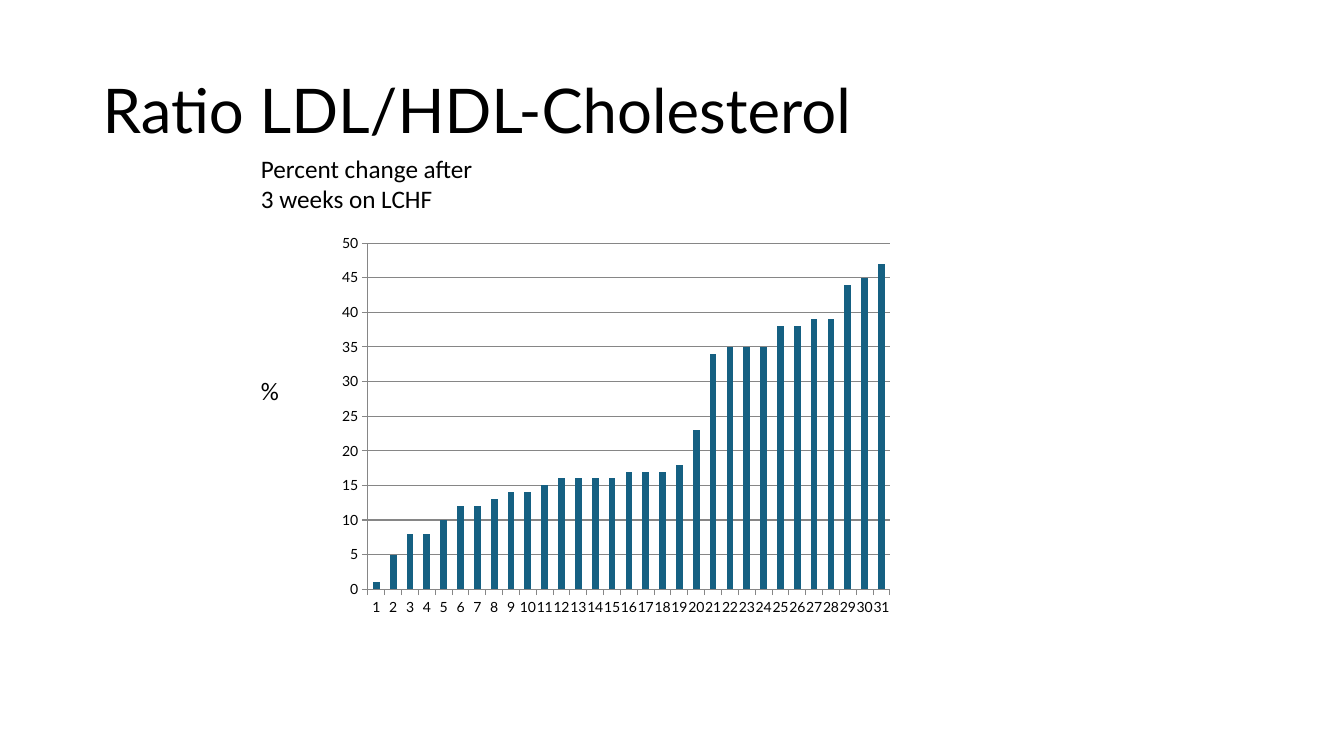
from pptx import Presentation
from pptx.chart.data import CategoryChartData
from pptx.dml.color import RGBColor
from pptx.enum.chart import XL_CHART_TYPE, XL_TICK_MARK
from pptx.enum.text import MSO_ANCHOR
from pptx.util import Inches, Pt

BLACK = RGBColor(0, 0, 0)
GRAY = RGBColor(0x86, 0x86, 0x86)
BLUE = RGBColor(0x15, 0x60, 0x82)

# text, box (left, top, width, height), font, size, anchor, line spacing
TEXTS = [
    ("Ratio LDL/HDL-Cholesterol", (0.92, 0.4, 11.5, 1.45),
     "Lato", 44, MSO_ANCHOR.MIDDLE, 0.9),
    ("Percent change after 3 weeks on LCHF", (2.49, 1.47, 2.44, 0.71),
     "Calibri", 18, MSO_ANCHOR.TOP, 1.0),
    ("%", (2.49, 3.67, 0.63, 0.4), "Calibri", 18, MSO_ANCHOR.TOP, 1.0),
]
CHART_BOX = (3.28, 2.25, 5.66, 3.94)
CHANGES = [1, 5, 8, 8, 10, 12, 12, 13, 14, 14, 15, 16, 16, 16, 16, 17,
           17, 17, 18, 23, 34, 35, 35, 35, 38, 38, 39, 39, 44, 45, 47]


def add_text(slide, text, box, font, size, anchor, spacing):
    frame = slide.shapes.add_textbox(*map(Inches, box)).text_frame
    frame.word_wrap = True
    frame.vertical_anchor = anchor
    para = frame.paragraphs[0]
    para.line_spacing = spacing
    run = para.add_run()
    run.text = text
    run.font.name = font
    run.font.size = Pt(size)
    run.font.color.rgb = BLACK


def add_bars(slide):
    data = CategoryChartData(number_format="0")
    data.categories = [str(n) for n in range(1, len(CHANGES) + 1)]
    data.add_series("Series 1", CHANGES)
    chart = slide.shapes.add_chart(
        XL_CHART_TYPE.COLUMN_CLUSTERED, *map(Inches, CHART_BOX), data).chart
    chart.has_legend = False
    chart.has_title = False
    chart.font.name = "Lato"
    chart.font.size = Pt(10)
    chart.font.color.rgb = BLACK

    plot = chart.plots[0]
    plot.gap_width = 150
    plot.vary_by_categories = False
    fill = plot.series[0].format.fill
    fill.solid()
    fill.fore_color.rgb = BLUE

    level = chart.value_axis
    level.minimum_scale, level.maximum_scale, level.major_unit = 0, 50, 5
    level.has_major_gridlines = True
    level.tick_labels.number_format = "0"
    level.tick_labels.number_format_is_linked = False
    for axis in (chart.category_axis, level):
        axis.major_tick_mark = XL_TICK_MARK.OUTSIDE
        axis.minor_tick_mark = XL_TICK_MARK.NONE
    for part in (chart.category_axis, level, level.major_gridlines):
        part.format.line.color.rgb = GRAY
        part.format.line.width = Pt(0.75)


def main():
    deck = Presentation()
    deck.slide_width, deck.slide_height = Inches(13.33), Inches(7.5)
    slide = deck.slides.add_slide(deck.slide_layouts[6])
    add_bars(slide)
    for item in TEXTS:
        add_text(slide, *item)
    deck.save("out.pptx")


if __name__ == "__main__":
    main()
